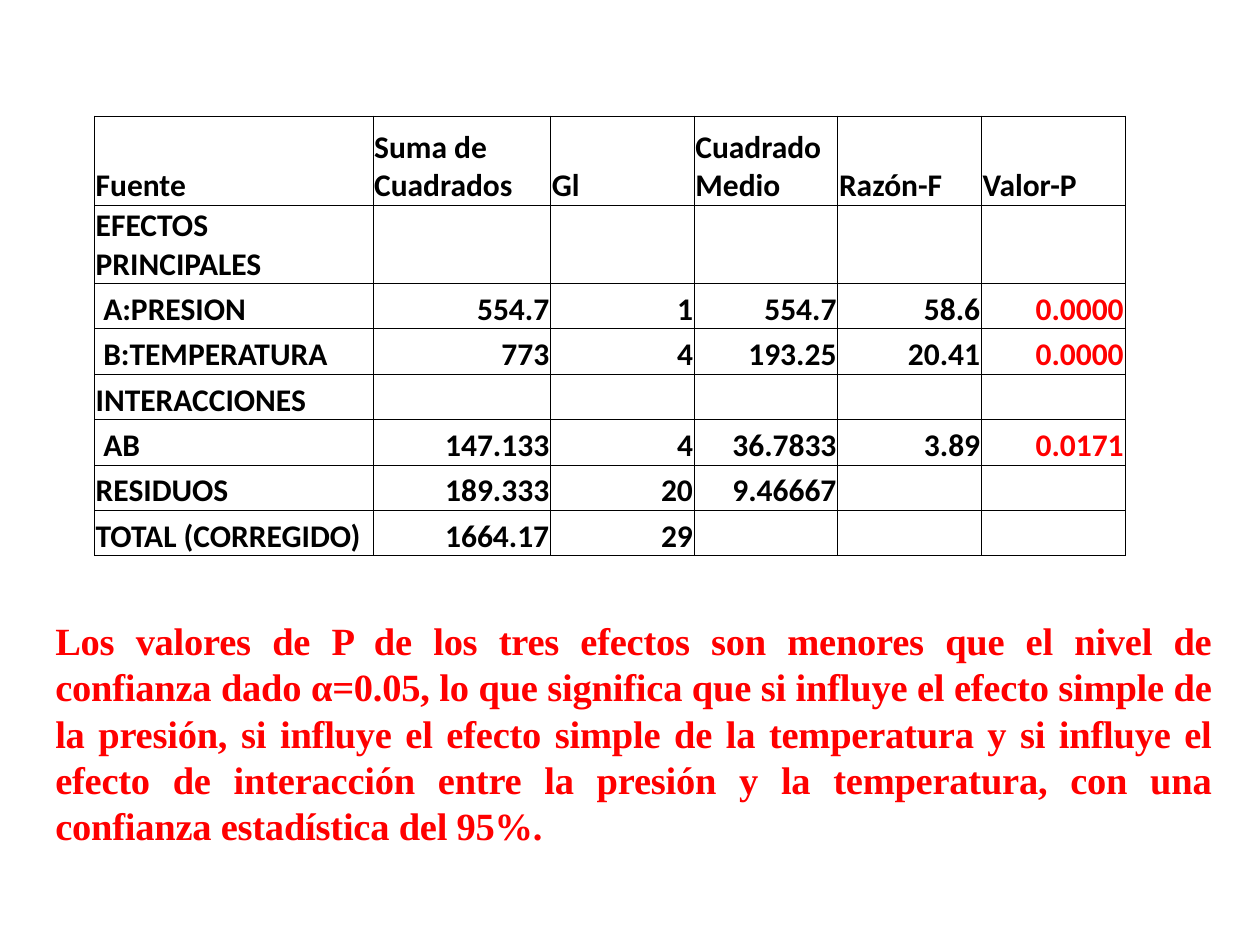
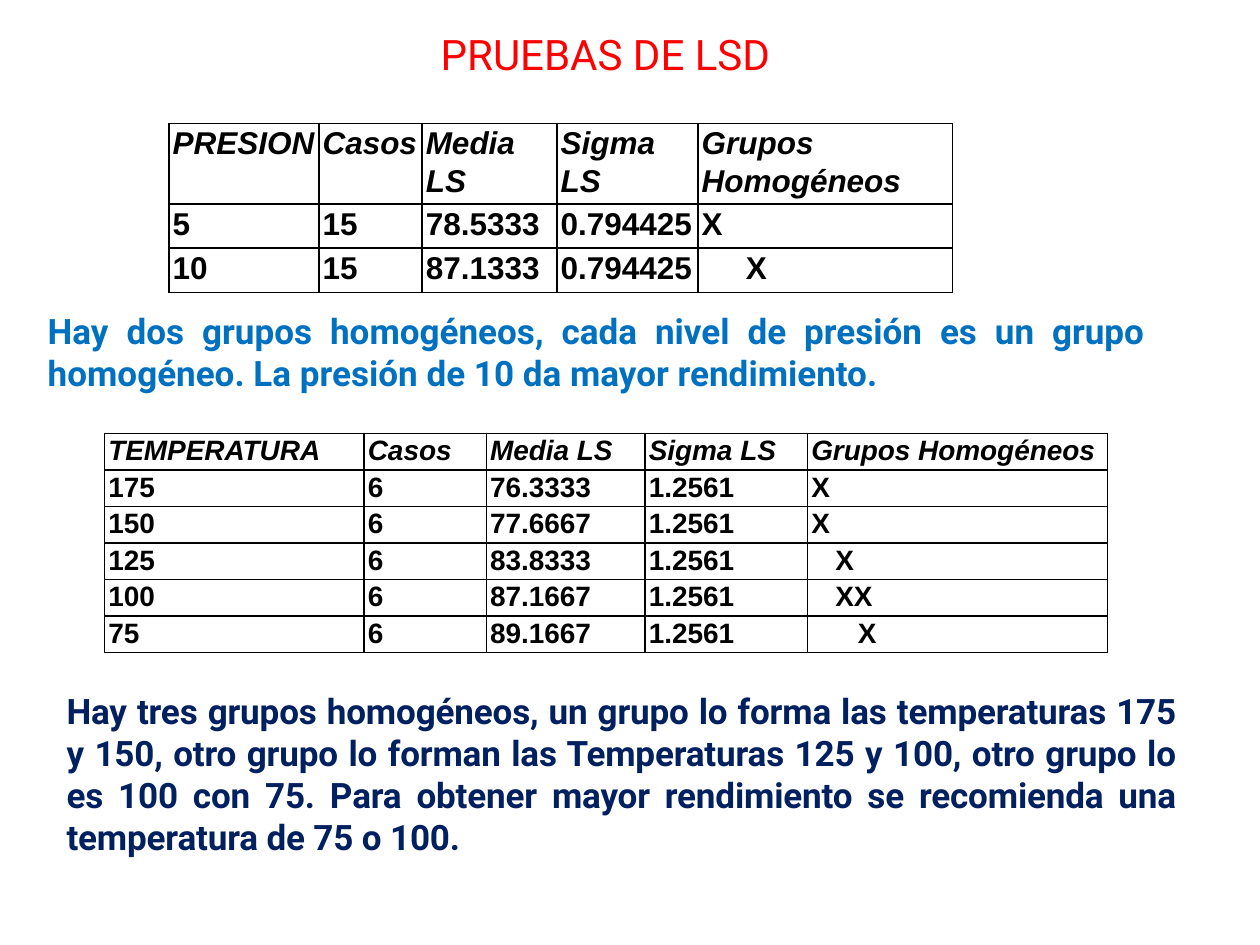
"""Build two slides: an ANOVA table and the LSD tests for pressure and temperature."""
from dataclasses import dataclass

from lxml import etree
from pptx import Presentation
from pptx.dml.color import RGBColor
from pptx.enum.text import MSO_ANCHOR, MSO_AUTO_SIZE, PP_ALIGN
from pptx.oxml.ns import qn
from pptx.util import Inches, Pt

LEFT, CENTER, RIGHT, JUSTIFY = PP_ALIGN.LEFT, PP_ALIGN.CENTER, PP_ALIGN.RIGHT, PP_ALIGN.JUSTIFY
TOP, BOTTOM = MSO_ANCHOR.TOP, MSO_ANCHOR.BOTTOM
NO_AUTOFIT = MSO_AUTO_SIZE.NONE
TITLE_ONLY, BLANK = 5, 6


@dataclass(frozen=True)
class Theme:
    black: str = "000000"
    red: str = "FF0000"
    blue: str = "0070C0"
    navy: str = "002060"
    anova_font: str = "Calibri"
    lsd_font: str = "Arial"
    title_font: str = "Roboto"
    serif_font: str = "Times New Roman"
    title_size: int = 24
    conclusion_size: int = 22
    finding_size: int = 20
    table_size: int = 18
    small_table_size: int = 16


theme = Theme()


def write_text(text_frame, text, font_name, size, color, alignment=LEFT, bold=True):
    """Put one formatted paragraph in a text frame and return it."""
    text_frame.text = text
    text_frame.word_wrap = True
    paragraph = text_frame.paragraphs[0]
    paragraph.alignment = alignment
    for run in paragraph.runs:
        run.font.name = font_name
        run.font.size = Pt(size)
        run.font.bold = bold
        run.font.color.rgb = RGBColor.from_string(color)
    return paragraph


def add_grid(slide, left, top, widths, heights, rows, margins, border):
    """Add an unfilled table with black borders and return it."""
    frame = slide.shapes.add_table(
        len(rows), len(widths), Inches(left), Inches(top),
        Inches(sum(widths)), Inches(sum(heights)))
    table = frame.table
    table.first_row = table.horz_banding = False
    for column, width in zip(table.columns, widths):
        column.width = Inches(width)
    for row, height in zip(table.rows, heights):
        row.height = Inches(height)
    for cell in table.iter_cells():
        cell.margin_left, cell.margin_top, cell.margin_right, cell.margin_bottom = map(Inches, margins)
        properties = cell._tc.get_or_add_tcPr()
        for side in ("a:lnL", "a:lnR", "a:lnT", "a:lnB"):
            line = etree.SubElement(properties, qn(side), w=str(Pt(border)))
            fill = etree.SubElement(line, qn("a:solidFill"))
            etree.SubElement(fill, qn("a:srgbClr"), val=theme.black)
        cell.fill.background()
    return table


presentation = Presentation()
presentation.slide_width = Inches(10)
presentation.slide_height = Inches(7.5)

anova_slide = presentation.slides.add_slide(presentation.slide_layouts[BLANK])
anova_rows = [
    ["Fuente", "Suma de Cuadrados", "Gl", "Cuadrado Medio", "Razón-F", "Valor-P"],
    ["EFECTOS PRINCIPALES", "", "", "", "", ""],
    ["A:PRESION", "554.7", "1", "554.7", "58.6", "0.0000"],
    ["B:TEMPERATURA", "773", "4", "193.25", "20.41", "0.0000"],
    ["INTERACCIONES", "", "", "", "", ""],
    ["AB", "147.133", "4", "36.7833", "3.89", "0.0171"],
    ["RESIDUOS", "189.333", "20", "9.46667", "", ""],
    ["TOTAL (CORREGIDO)", "1664.17", "29", "", "", ""],
]
effects = {"A:PRESION", "B:TEMPERATURA", "AB"}
anova_table = add_grid(anova_slide, 0.75, 0.92, [2.21, 1.41] + [1.14] * 4,
                       [0.71, 0.61] + [0.36] * 6, anova_rows, (0.01, 0.01, 0.01, 0), 0.5)
for row_index, row in enumerate(anova_rows):
    for column_index, text in enumerate(row):
        cell = anova_table.cell(row_index, column_index)
        cell.vertical_anchor = BOTTOM
        is_value = row_index > 0 and column_index > 0
        is_p_value = is_value and column_index == len(row) - 1
        paragraph = write_text(cell.text_frame, text, theme.anova_font, theme.table_size,
                               theme.red if is_p_value else theme.black,
                               RIGHT if is_value else LEFT)
        if text in effects:
            paragraph._p.get_or_add_pPr().set("marL", str(Inches(0.06)))

lsd_slide = presentation.slides.add_slide(presentation.slide_layouts[TITLE_ONLY])
title = lsd_slide.shapes.title
title.left, title.top, title.width, title.height = map(Inches, (1.38, 0.18, 6.85, 0.5))
title.text_frame.auto_size = NO_AUTOFIT
title.text_frame.vertical_anchor = TOP
write_text(title.text_frame, "PRUEBAS DE LSD", theme.title_font, theme.title_size,
           theme.red, CENTER, bold=False)

lsd_headings = ["Casos", "Media LS", "Sigma LS", "Grupos Homogéneos"]
pressure_rows = [
    ["PRESION"] + lsd_headings,
    ["5", "15", "78.5333", "0.794425", "X"],
    ["10", "15", "87.1333", "0.794425", "X"],
]
temperature_rows = [
    ["TEMPERATURA"] + lsd_headings,
    ["175", "6", "76.3333", "1.2561", "X"],
    ["150", "6", "77.6667", "1.2561", "X"],
    ["125", "6", "83.8333", "1.2561", "X"],
    ["100", "6", "87.1667", "1.2561", "XX"],
    ["75", "6", "89.1667", "1.2561", "X"],
]
lsd_tables = [
    (1.34, 0.98, [1.19, 0.82, 1.07, 1.12, 2.02], [0.64, 0.35, 0.35],
     pressure_rows, theme.table_size, [0, 0, 0.35]),
    (0.83, 3.44, [2.06, 0.97, 1.26, 1.29, 2.38], [0.29] * 6,
     temperature_rows, theme.small_table_size, [0, 0, 0, 0.19, 0.19, 0.37]),
]
for left, top, widths, heights, rows, size, group_indents in lsd_tables:
    lsd_table = add_grid(lsd_slide, left, top, widths, heights, rows, (0.03, 0, 0.02, 0), 1)
    for row_index, row in enumerate(rows):
        for column_index, text in enumerate(row):
            paragraph = write_text(lsd_table.cell(row_index, column_index).text_frame, text,
                                   theme.lsd_font, size, theme.black)
            paragraph.line_spacing = 1.07
            paragraph.runs[0].font.italic = row_index == 0
        paragraph._p.get_or_add_pPr().set("marL", str(Inches(group_indents[row_index])))

statements = [
    (anova_slide, (0.34, 4.85, 9.38, 1.95), theme.serif_font, theme.conclusion_size, theme.red, -10,
     "Los valores de P de los tres efectos son menores que el nivel de confianza dado α=0.05, "
     "lo que significa que si influye el efecto simple de la presión, si influye el efecto "
     "simple de la temperatura y si influye el efecto de interacción entre la presión y la "
     "temperatura, con una confianza estadística del 95%."),
    (lsd_slide, (0.28, 2.41, 8.91, 0.77), theme.title_font, theme.finding_size, theme.blue, 0,
     "Hay dos grupos homogéneos, cada nivel de presión es un grupo homogéneo. "
     "La presión de 10 da mayor rendimiento."),
    (lsd_slide, (0.43, 5.42, 9, 1.78), theme.title_font, theme.finding_size, theme.navy, -10,
     "Hay tres grupos homogéneos, un grupo lo forma las temperaturas 175 y 150, otro grupo lo "
     "forman las Temperaturas 125 y 100, otro grupo lo es 100 con 75. Para obtener mayor "
     "rendimiento se recomienda una temperatura de 75 o 100."),
]
for slide, box, font_name, size, color, letter_spacing, text in statements:
    shape = slide.shapes.add_textbox(*map(Inches, box))
    paragraph = write_text(shape.text_frame, text, font_name, size, color, JUSTIFY)
    paragraph.runs[0]._r.get_or_add_rPr().set("spc", str(letter_spacing))

presentation.save("out.pptx")
